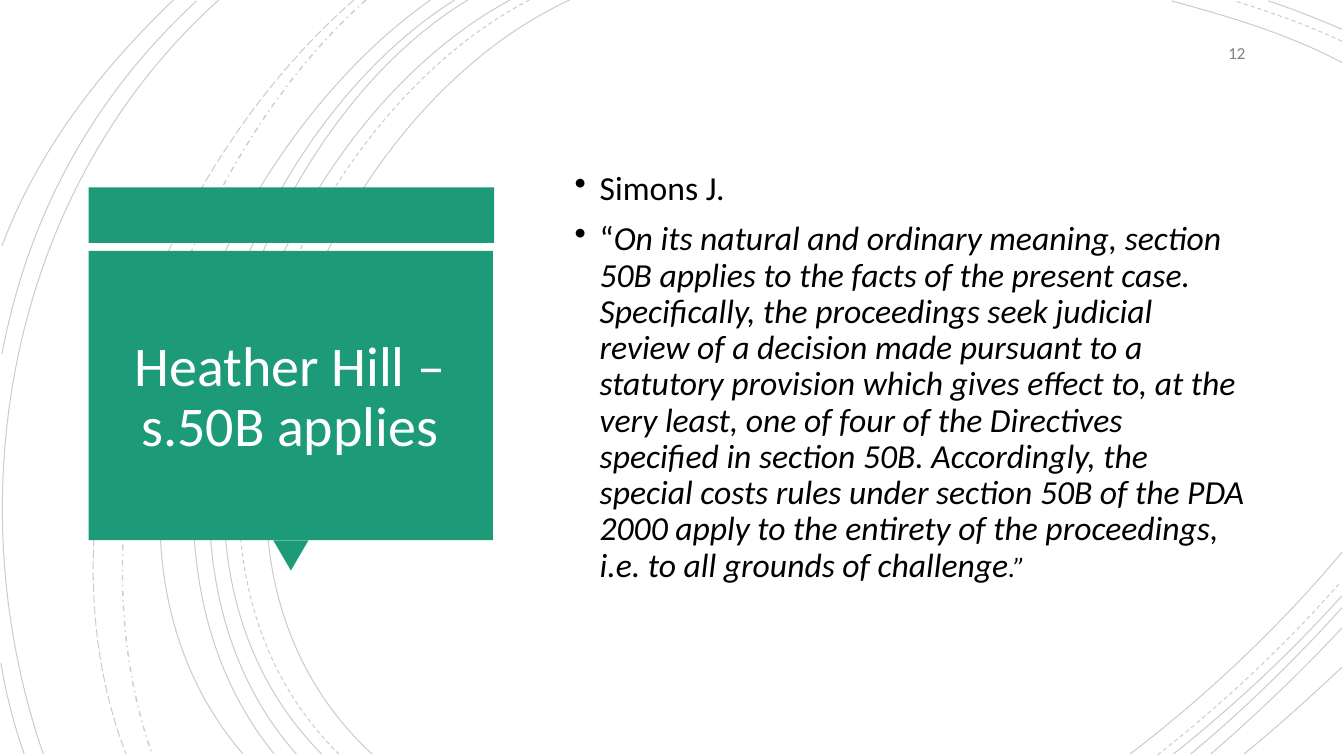
import pptx
import pptx.util
import pptx.dml.color
import pptx.enum.dml
import pptx.enum.shapes
import pptx.enum.text
import pptx.oxml
import pptx.oxml.ns

PX = 9144  # EMU in one px, 100 px to the inch
COLORS = {"green": "1D9A78", "white": "FFFFFF", "black": "000000", "grey": "808080"}
DASH = pptx.enum.dml.MSO_LINE
PRESET = pptx.enum.shapes.MSO_SHAPE
ALIGN = pptx.enum.text.PP_ALIGN
qn = pptx.oxml.ns.qn


def rgb(name):
    return pptx.dml.color.RGBColor.from_string(COLORS[name])


def style_text(frame, paragraph, size, color, align):
    frame.word_wrap = True
    frame.auto_size = pptx.enum.text.MSO_AUTO_SIZE.NONE
    frame.vertical_anchor = pptx.enum.text.MSO_ANCHOR.MIDDLE
    paragraph.alignment = align
    paragraph.font.name = "Calibri"
    paragraph.font.size = pptx.util.Pt(size)
    paragraph.font.color.rgb = rgb(color)


deck = pptx.Presentation()
deck.slide_width, deck.slide_height = 1333 * PX, 750 * PX
slide = deck.slides.add_slide(deck.slide_layouts[5])
shapes = slide.shapes

# Background arcs: start, two control points and end of one Bezier curve each
arcs = {
    (DASH.SOLID, 0.75): [
        [(565, 0), (315, 115), (143, 540), (369, 748)],
        [(1331, 62), (1278, 34), (1218, 16), (1162, 1)],
        [(1121, 748), (1197, 690), (1269, 622), (1331, 548)],
        [(506, 0), (270, 127), (110, 537), (319, 748)],
        [(1331, 29), (1307, 19), (1283, 9), (1258, 1)],
        [(1164, 748), (1223, 701), (1280, 648), (1331, 591)],
        [(464, 0), (244, 133), (110, 541), (294, 748)],
        [(1181, 748), (1234, 704), (1284, 655), (1331, 603)],
        [(451, 0), (231, 138), (97, 533), (272, 748)],
        [(1201, 748), (1246, 709), (1290, 667), (1331, 623)],
        [(427, 0), (217, 147), (53, 529), (241, 748)],
        [(1234, 748), (1267, 721), (1299, 692), (1331, 662)],
        [(217, 0), (11, 185), (-46, 490), (43, 748)],
        [(195, 1), (92, 96), (28, 214), (2, 351)],
        [(1, 658), (6, 689), (14, 719), (24, 748)],
        [(172, 0), (100, 69), (37, 150), (2, 244)],
    ],
    (DASH.DASH, 0.75): [
        [(525, 0), (285, 125), (123, 537), (336, 748)],
        [(1331, 41), (1297, 25), (1260, 12), (1225, 1)],
        [(1148, 749), (1213, 698), (1275, 640), (1330, 577)],
    ],
    (DASH.DASH_DOT, 1): [[(363, 0), (176, 166), (65, 509), (151, 748)]],
    (DASH.LONG_DASH, 0.75): [[(351, 0), (157, 169), (29, 499), (125, 748)]],
}
for (dash, width), curves in arcs.items():
    for start, *rest in curves:
        builder = shapes.build_freeform(*start, scale=PX)
        builder.add_line_segments(rest, close=False)
        arc = builder.convert_to_shape()
        arc.shadow.inherit = False
        arc.fill.background()
        arc.line.width = pptx.util.Pt(width)
        arc.line.dash_style = dash
        arc.line.color.rgb = rgb("black")
        # 20 % opacity
        ink = next(arc._element.iter(qn("a:srgbClr")))
        ink.append(pptx.oxml.parse_xml(
            f'<a:alpha {pptx.oxml.ns.nsdecls("a")} val="20000"/>'))
        # Turn the three straight segments into one cubic curve
        outline = next(arc._element.iter(qn("a:path")))
        bezier = pptx.oxml.parse_xml(f'<a:cubicBezTo {pptx.oxml.ns.nsdecls("a")}/>')
        for segment in outline.findall(qn("a:lnTo")):
            bezier.append(segment[0])
            outline.remove(segment)
        outline.append(bezier)

# Green title panel with its pointer
for preset, left, top, width, height, rotation in [
    (PRESET.RECTANGLE, 88, 186, 402, 55, 0),
    (PRESET.ISOSCELES_TRIANGLE, 271, 536, 35, 30, 180),
    (PRESET.RECTANGLE, 88, 249, 401, 287, 0),
]:
    panel = shapes.add_shape(preset, left * PX, top * PX, width * PX, height * PX)
    panel.rotation = rotation
    panel.shadow.inherit = False
    panel.fill.solid()
    panel.fill.fore_color.rgb = rgb("green")
    panel.line.fill.background()

# Title, brought in front of the panel
title = shapes.title
title.left, title.top, title.width, title.height = 99 * PX, 264 * PX, 377 * PX, 262 * PX
title.text_frame.text = "Heather Hill – s.50B applies"
heading = title.text_frame.paragraphs[0]
heading.line_spacing = 0.9
style_text(title.text_frame, heading, 40, "white", ALIGN.CENTER)
shapes._spTree.append(title._element)

# Slide number
number = shapes.add_textbox(1145 * PX, 35 * PX, 100 * PX, 35 * PX).text_frame
number.text = "12"
number.paragraphs[0].space_after = pptx.util.Pt(6)
style_text(number, number.paragraphs[0], 12, "grey", ALIGN.RIGHT)

# Quotation: (text, italic, own size) for each run
quotation = [
    [("Simons J.", False, None)],
    [
        ("“", False, None),
        ("On its natural and ordinary meaning, section 50B applies to the facts of the "
         "present case. Specifically, the proceedings seek judicial review of a decision "
         "made pursuant to a statutory provision which gives effect to, at the very least, "
         "one of four of the Directives specified in section 50B. Accordingly, the special "
         "costs rules under section 50B of the PDA 2000 apply to the entirety of the "
         "proceedings, i.e. to all grounds of challenge", True, None),
        (".”", True, 20),
    ],
]
body = shapes.add_textbox(560 * PX, 88 * PX, 687 * PX, 574 * PX).text_frame
for index, runs in enumerate(quotation):
    bullet = body.add_paragraph() if index else body.paragraphs[0]
    bullet.line_spacing = 0.9
    bullet.space_before = pptx.util.Pt(10)
    style_text(body, bullet, 24, "black", ALIGN.LEFT)
    for text, italic, size in runs:
        run = bullet.add_run()
        run.text = text
        run.font.italic = italic
        if size:
            run.font.size = pptx.util.Pt(size)
    properties = bullet._p.get_or_add_pPr()
    properties.set("marL", str(25 * PX))
    properties.set("indent", str(-25 * PX))
    mark = pptx.oxml.parse_xml(f'<a:buChar {pptx.oxml.ns.nsdecls("a")} char="•"/>')
    properties.find(qn("a:defRPr")).addprevious(mark)

deck.save("out.pptx")
